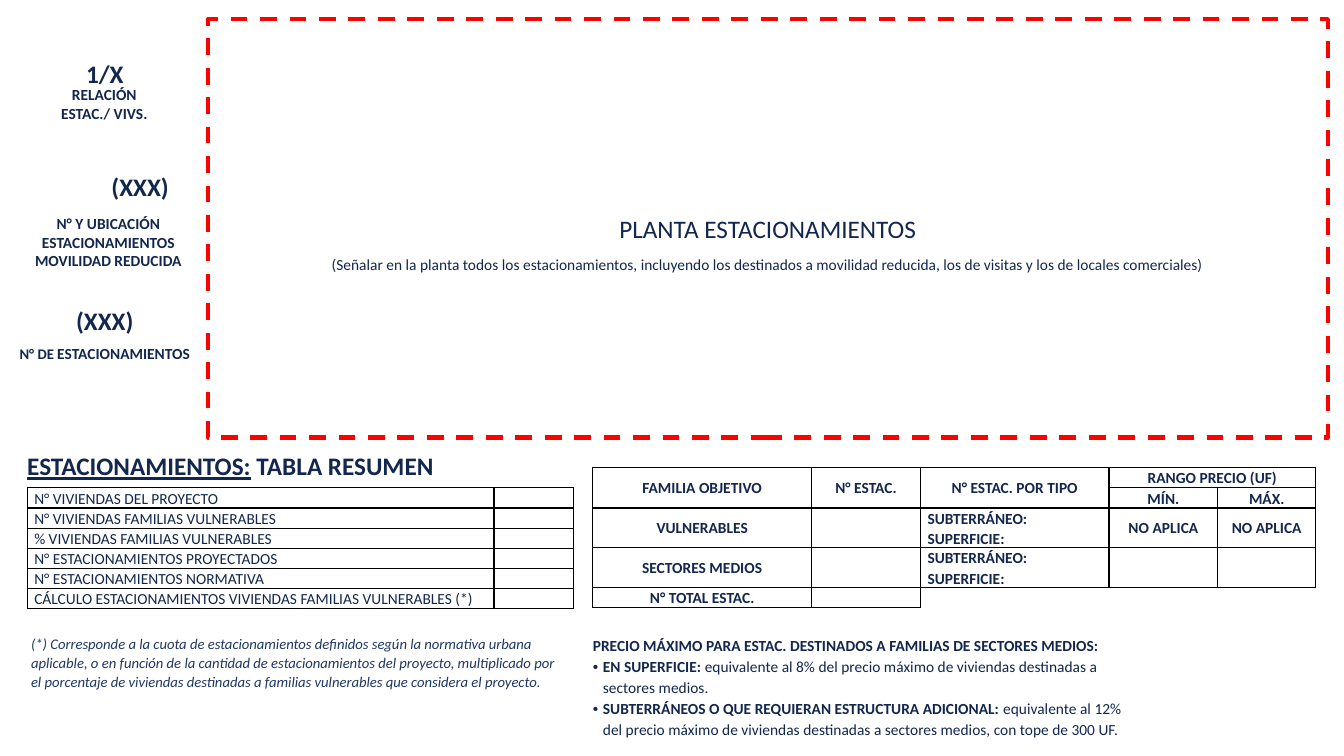
import pptx
import pptx.util
import pptx.dml.color
import pptx.enum.dml
import pptx.enum.shapes
import pptx.enum.text
import pptx.oxml
import pptx.oxml.ns

Inches = pptx.util.Inches
Pt = pptx.util.Pt
RGBColor = pptx.dml.color.RGBColor
ALIGN = pptx.enum.text.PP_ALIGN
ANCHOR = pptx.enum.text.MSO_ANCHOR

NAVY = RGBColor(0x12, 0x26, 0x4E)
BLUE = RGBColor(0x20, 0x38, 0x64)
RED = RGBColor(0xFF, 0x00, 0x00)
NAMESPACE = pptx.oxml.ns.nsdecls("a")


def add_text(paragraph, text, size=11, bold=False, italic=False, underline=False,
             color=NAVY, align=ALIGN.LEFT, spacing=1.0):
    """Append one formatted run and set the paragraph's alignment and line spacing."""
    paragraph.alignment = align
    paragraph.line_spacing = spacing
    run = paragraph.add_run()
    run.text = text
    run.font.name = "Calibri"
    run.font.size = Pt(size)
    run.font.bold = bold
    run.font.italic = italic
    run.font.underline = underline
    run.font.color.rgb = color


def fill_cell(cell, text, bold, align, sides):
    """Write the lines of a cell and draw its black borders on the given sides."""
    cell.fill.background()
    cell.vertical_anchor = ANCHOR.MIDDLE
    cell.margin_left = cell.margin_right = Inches(0.07)
    cell.margin_top = cell.margin_bottom = 0
    paragraph = cell.text_frame.paragraphs[0]
    if text:
        for number, line in enumerate(text.split("\n")):
            if number:
                paragraph = cell.text_frame.add_paragraph()
            add_text(paragraph, line, bold=bold, align=align, spacing=1.07)
    else:
        paragraph._p.append(pptx.oxml.parse_xml(f'<a:endParaRPr {NAMESPACE} sz="1100"/>'))
    properties = cell._tc.get_or_add_tcPr()
    for position, side in enumerate("LRTB"):
        paint = "<a:noFill/>"
        if side in sides:
            paint = '<a:solidFill><a:srgbClr val="000000"/></a:solidFill>'
        properties.insert(position, pptx.oxml.parse_xml(
            f'<a:ln{side} {NAMESPACE} w="12700">{paint}</a:ln{side}>'))


presentation = pptx.Presentation()
presentation.slide_width = Inches(13.33)
presentation.slide_height = Inches(7.5)
slide = presentation.slides.add_slide(presentation.slide_layouts[1])

# Title and price rules
title = slide.shapes.title
rules = slide.placeholders[1]
for placeholder, left, top, width, height in (
    (title, 0.17, 4.42, 6.02, 0.4),
    (rules, 5.78, 6.24, 5.51, 1.15),
):
    placeholder.left, placeholder.top = Inches(left), Inches(top)
    placeholder.width, placeholder.height = Inches(width), Inches(height)
    placeholder.text_frame.auto_size = pptx.enum.text.MSO_AUTO_SIZE.NONE
    placeholder.text_frame.vertical_anchor = ANCHOR.TOP

heading = title.text_frame.paragraphs[0]
add_text(heading, "ESTACIONAMIENTOS:", size=18, bold=True, underline=True)
add_text(heading, " TABLA RESUMEN", size=18, bold=True)

price_rules = [
    ("PRECIO MÁXIMO PARA ESTAC. DESTINADOS A FAMILIAS DE SECTORES MEDIOS:", ""),
    ("EN SUPERFICIE: ",
     "equivalente al 8% del precio máximo de viviendas destinadas a sectores medios."),
    ("SUBTERRÁNEOS O QUE REQUIERAN ESTRUCTURA ADICIONAL: ",
     "equivalente al 12% del precio máximo de viviendas destinadas a sectores medios, "
     "con tope de 300 UF."),
]
for number, (lead, detail) in enumerate(price_rules):
    paragraph = rules.text_frame.add_paragraph() if number else rules.text_frame.paragraphs[0]
    properties = paragraph._p.get_or_add_pPr()
    indent = Inches(0.1) if detail else 0
    properties.set("marL", str(indent))
    properties.set("indent", str(-indent))
    bullet = '<a:buChar {} char="•"/>' if detail else "<a:buNone {}/>"
    properties.append(pptx.oxml.parse_xml(bullet.format(NAMESPACE)))
    paragraph.space_before = Pt(0)
    add_text(paragraph, lead, bold=True, spacing=Pt(15))
    if detail:
        add_text(paragraph, detail, spacing=Pt(15))

# Parking plan area
plan = slide.shapes.add_shape(pptx.enum.shapes.MSO_SHAPE.RECTANGLE,
                              Inches(2.06), Inches(0.19), Inches(11.11), Inches(4.15))
plan.shadow.inherit = False
plan.fill.background()
plan.line.color.rgb = RED
plan.line.width = Pt(3)
plan.line.dash_style = pptx.enum.dml.MSO_LINE.DASH
plan.text_frame.vertical_anchor = ANCHOR.MIDDLE
add_text(plan.text_frame.paragraphs[0], "PLANTA ESTACIONAMIENTOS", size=18, align=ALIGN.CENTER)

# Key figures and notes: left, top, width, height, wrap, text, format
figure = {"size": 18, "bold": True, "align": ALIGN.CENTER}
label = {"bold": True, "align": ALIGN.CENTER}
note = {"size": 10.5, "italic": True, "color": BLUE, "spacing": 1.07}
text_boxes = [
    (0.75, 0.53, 0.58, 0.4, False, "1/X", figure),
    (0.46, 0.8, 1.15, 0.47, True, "RELACIÓN\nESTAC./ VIVS.", label),
    (0.7, 1.65, 1.38, 0.4, True, "(XXX)", figure),
    (0.17, 2.08, 1.81, 0.66, True, "N° Y UBICACIÓN ESTACIONAMIENTOS MOVILIDAD REDUCIDA", label),
    (0.65, 2.98, 0.78, 0.4, False, "(XXX)", figure),
    (2.07, 2.48, 11.09, 0.29, True,
     "(Señalar en la planta todos los estacionamientos, incluyendo los destinados a movilidad "
     "reducida, los de visitas y los de locales comerciales)", {"align": ALIGN.CENTER}),
    (0.21, 6.24, 5.47, 0.67, True,
     "(*) Corresponde a la cuota de estacionamientos definidos según la normativa urbana "
     "aplicable, o en función de la cantidad de estacionamientos del proyecto, multiplicado por "
     "el porcentaje de viviendas destinadas a familias vulnerables que considera el proyecto.",
     note),
]
for left, top, width, height, wrap, text, text_format in text_boxes:
    box = slide.shapes.add_textbox(Inches(left), Inches(top), Inches(width), Inches(height))
    box.text_frame.word_wrap = wrap
    for number, line in enumerate(text.split("\n")):
        paragraph = box.text_frame.add_paragraph() if number else box.text_frame.paragraphs[0]
        if text_format is note:
            paragraph.space_before = Pt(2 if number else 0)
            paragraph.space_after = Pt(2)
        add_text(paragraph, line, **text_format)

count_box = slide.shapes.add_textbox(0, Inches(3.36), Inches(2.08), Inches(0.29))
count_box.text_frame.word_wrap = True
count_label = count_box.text_frame.paragraphs[0]
add_text(count_label, "N° DE ", size=10.5, **label)
add_text(count_label, "ESTACIONAMIENTOS", **label)

# Summary tables
types = "SUBTERRÁNEO:\nSUPERFICIE:"
price_rows = [
    ["FAMILIA OBJETIVO", "N° ESTAC.", "N° ESTAC. POR TIPO", "RANGO PRECIO (UF)", ""],
    ["", "", "", "MÍN.", "MÁX."],
    ["VULNERABLES", "", types, "NO APLICA", "NO APLICA"],
    ["SECTORES MEDIOS", "", types, "", ""],
    ["N° TOTAL ESTAC.", "", "", "", ""],
]
summary_rows = [[name, ""] for name in (
    "N° VIVIENDAS DEL PROYECTO",
    "N° VIVIENDAS FAMILIAS VULNERABLES",
    "% VIVIENDAS FAMILIAS VULNERABLES",
    "N° ESTACIONAMIENTOS PROYECTADOS",
    "N° ESTACIONAMIENTOS NORMATIVA",
    "CÁLCULO ESTACIONAMIENTOS VIVIENDAS FAMILIAS VULNERABLES (*)",
)]
price_merges = [(0, 0, 1, 0), (0, 1, 1, 1), (0, 2, 1, 2), (0, 3, 0, 4), (4, 2, 4, 4)]
tables = [
    (5.88, 4.64, [2.17, 1.08, 1.87, 1.08, 0.97], [0.2, 0.2, 0.39, 0.39, 0.2],
     price_rows, price_merges, True),
    (0.27, 4.84, [4.63, 0.79], [0.2] * 6, summary_rows, [], False),
]
for left, top, widths, heights, rows, merges, is_price in tables:
    table = slide.shapes.add_table(len(rows), len(widths), Inches(left), Inches(top),
                                   Inches(sum(widths)), Inches(sum(heights))).table
    table.first_row = table.horz_banding = False
    for column, width in zip(table.columns, widths):
        column.width = Inches(width)
    for row, height in zip(table.rows, heights):
        row.height = Inches(height)
    for row_number, row in enumerate(rows):
        for column_number, text in enumerate(row):
            align = ALIGN.CENTER if is_price and text != types else ALIGN.LEFT
            sides = "LRTB"
            if is_price and row_number == 4 and column_number >= 2:
                sides = "LT" if column_number == 2 else "T"
            fill_cell(table.cell(row_number, column_number), text, is_price, align, sides)
    for first_row, first_column, last_row, last_column in merges:
        table.cell(first_row, first_column).merge(table.cell(last_row, last_column))

presentation.save("out.pptx")
